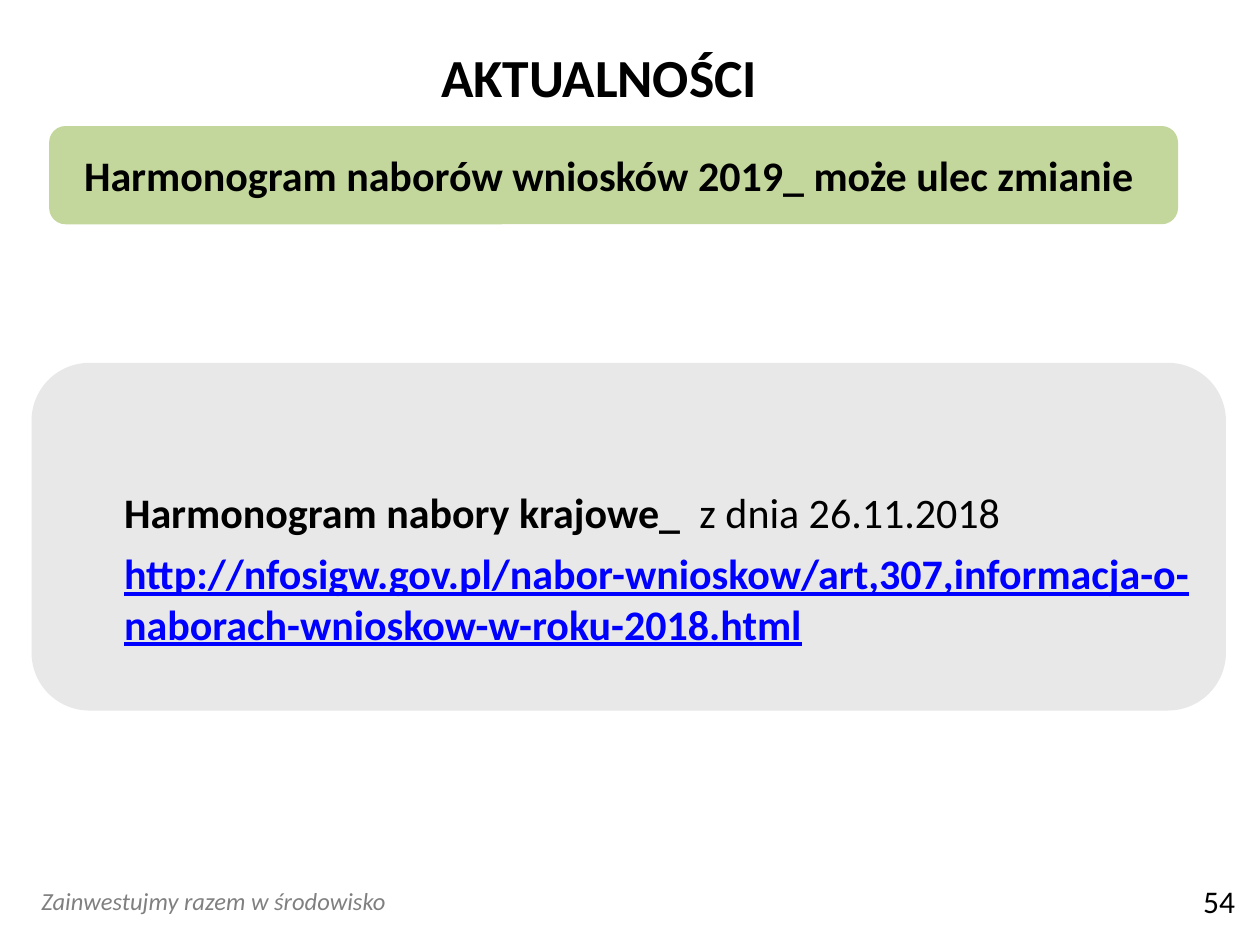
"""Builds the AKTUALNOŚCI slide with the 2019 call schedule."""
from pptx import Presentation, util as u
from pptx.dml.color import RGBColor
from pptx.enum import shapes, text

COLORS = {"text": "000000", "muted": "808080", "link": "0000FF",
          "green": "C3D69B", "panel": "E8E8E8"}


def add_text(p, content, size=24, color="text", bold=False, italic=False, underline=False):
    """Add a formatted run to a paragraph."""
    r = p.add_run()
    r.text = content
    f = r.font
    f.name, f.size = "Calibri", u.Pt(size)
    f.bold, f.italic, f.underline = bold, italic, underline
    f.color.rgb = RGBColor.from_string(COLORS[color])


class SlideBuilder:
    """Holds the style and the current slide."""

    def __init__(self, prs):
        """Start a title-only slide."""
        self.s = prs.slides.add_slide(prs.slide_layouts[5])

    def title(self, content, box, **fmt):
        """Place and format the title placeholder."""
        sp = self.s.shapes.title
        sp.left, sp.top, sp.width, sp.height = map(u.Inches, box)
        tf = sp.text_frame
        tf.auto_size = text.MSO_AUTO_SIZE.NONE
        tf.vertical_anchor = text.MSO_ANCHOR.MIDDLE
        p = tf.paragraphs[0]
        p.alignment = text.PP_ALIGN.CENTER
        add_text(p, content, **fmt)

    def label(self, content, box, **fmt):
        """Add a one-line text box."""
        tf = self.s.shapes.add_textbox(*map(u.Inches, box)).text_frame
        tf.word_wrap = True
        add_text(tf.paragraphs[0], content, **fmt)

    def panel(self, box, fill):
        """Add a rounded panel and return its text frame."""
        sp = self.s.shapes.add_shape(shapes.MSO_SHAPE.ROUNDED_RECTANGLE, *map(u.Inches, box))
        sp.shadow.inherit = False
        sp.fill.solid()
        sp.fill.fore_color.rgb = RGBColor.from_string(COLORS[fill])
        sp.line.fill.background()
        tf = sp.text_frame
        tf.word_wrap = True
        return tf

    def banner(self, content, box, **fmt):
        """Add a green panel with centred text."""
        tf = self.panel(box, "green")
        tf.vertical_anchor = text.MSO_ANCHOR.MIDDLE
        p = tf.paragraphs[0]
        p.alignment = text.PP_ALIGN.CENTER
        add_text(p, content, **fmt)

    def details(self, paragraphs, box):
        """Add a grey panel with indented paragraphs of formatted runs."""
        tf = self.panel(box, "panel")
        tf.vertical_anchor = text.MSO_ANCHOR.TOP
        tf.margin_top, tf.margin_left = u.Inches(0.85), u.Inches(0.6)
        for i, runs in enumerate(paragraphs):
            p = tf.add_paragraph() if i else tf.paragraphs[0]
            p.alignment = text.PP_ALIGN.LEFT
            p.space_before = u.Pt(6 if i else 0)
            for content, fmt in runs:
                add_text(p, content, **fmt)


def main():
    """Build and save the slide."""
    prs = Presentation()
    prs.slide_width, prs.slide_height = u.Inches(10), u.Inches(7.5)
    b = SlideBuilder(prs)
    b.label("Zainwestujmy razem w środowisko", (0.23, 6.98, 4.22, 0.34),
            size=14, color="muted", italic=True)
    b.label("54", (9.45, 6.95, 0.55, 0.4), size=18)
    b.title("AKTUALNOŚCI", (0.59, 0.3, 8.33, 0.61), size=30.6, bold=True)
    b.banner("Harmonogram naborów wniosków 2019_ może ulec zmianie ",
             (0.39, 1, 8.96, 0.78), bold=True)
    b.details([
        [("Harmonogram nabory krajowe_ ", {"bold": True}), (" z dnia 26.11.2018", {})],
        [("http://nfosigw.gov.pl/nabor-wnioskow/art,307,informacja-o-"
          "naborach-wnioskow-w-roku-2018.html",
          {"color": "link", "bold": True, "underline": True})],
    ], (0.25, 2.88, 9.48, 2.76))
    prs.save("out.pptx")


if __name__ == "__main__":
    main()
